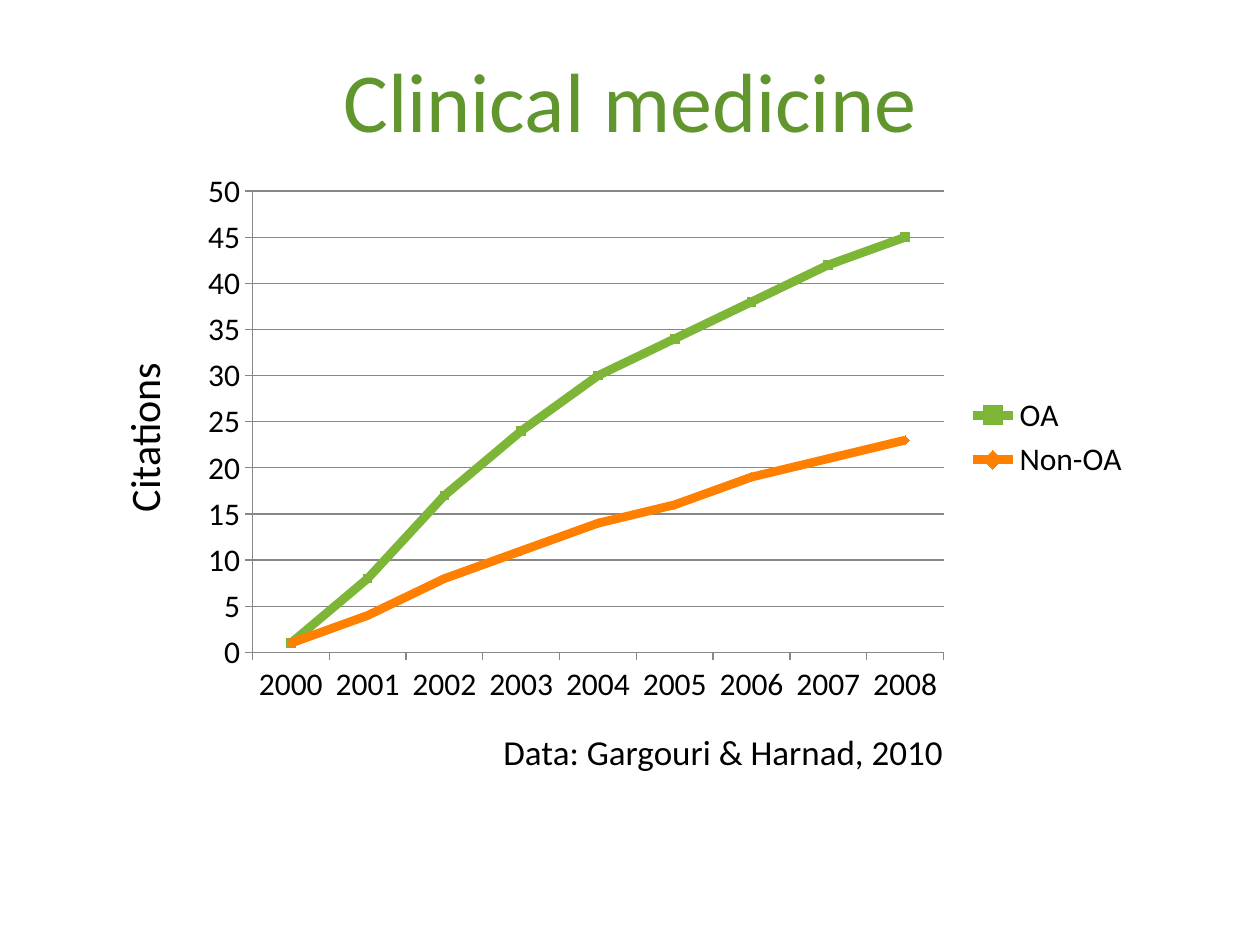
from pptx import Presentation
from pptx.chart.data import CategoryChartData
from pptx.dml.color import RGBColor
from pptx.enum.chart import XL_CHART_TYPE, XL_LEGEND_POSITION, XL_MARKER_STYLE, XL_TICK_MARK
from pptx.enum.text import MSO_ANCHOR, MSO_AUTO_SIZE, PP_ALIGN
from pptx.util import Pt

FONT = "Calibri"
COLORS = {"heading": "61952D", "text": "000000", "grid": "878787",
          "oa": "7DB536", "non_oa": "FF8000"}
YEARS = [str(year) for year in range(2000, 2009)]
CITATIONS = [
    ("OA", "oa", XL_MARKER_STYLE.SQUARE, [1, 8, 17, 24, 30, 34, 38, 42, 45]),
    ("Non-OA", "non_oa", XL_MARKER_STYLE.DIAMOND, [1, 4, 8, 11, 14, 16, 19, 21, 23]),
]


def rgb(name):
    return RGBColor.from_string(COLORS[name])


def points(box):
    return [Pt(length) for length in box]


def write(frame, text, size, color="text", align=PP_ALIGN.LEFT):
    paragraph = frame.paragraphs[0]
    paragraph.alignment = align
    run = paragraph.add_run()
    run.text = text
    run.font.name = FONT
    run.font.size = Pt(size)
    run.font.color.rgb = rgb(color)


def add_label(slide, box, text, size, align, vertical=None):
    frame = slide.shapes.add_textbox(*points(box)).text_frame
    frame.word_wrap = True
    frame.auto_size = MSO_AUTO_SIZE.SHAPE_TO_FIT_TEXT
    if vertical:
        frame._txBody.bodyPr.set("vert", vertical)
    write(frame, text, size, align=align)


def add_title(slide, box, text):
    title = slide.shapes.title
    title.left, title.top, title.width, title.height = points(box)
    title.text_frame.vertical_anchor = MSO_ANCHOR.MIDDLE
    write(title.text_frame, text, 48, color="heading", align=PP_ALIGN.CENTER)


def add_citation_chart(slide, box):
    left, top, width, height = box
    chart_data = CategoryChartData()
    chart_data.categories = YEARS
    for name, _, _, counts in CITATIONS:
        chart_data.add_series(name, counts)
    chart = slide.shapes.add_chart(
        XL_CHART_TYPE.LINE_MARKERS, *points(box), chart_data).chart
    chart.has_title = False
    chart.font.name = FONT
    chart.font.size = Pt(18)
    chart.font.color.rgb = rgb("text")

    # Axes and legend
    counts_axis = chart.value_axis
    for axis in (chart.category_axis, counts_axis):
        axis.major_tick_mark = XL_TICK_MARK.OUTSIDE
        axis.minor_tick_mark = XL_TICK_MARK.NONE
    counts_axis.minimum_scale, counts_axis.maximum_scale = 0, 50
    counts_axis.major_unit = 5
    counts_axis.has_major_gridlines = True
    for ruled in (chart.category_axis, counts_axis, counts_axis.major_gridlines):
        ruled.format.line.color.rgb = rgb("grid")
        ruled.format.line.width = Pt(0.75)
    chart.has_legend = True
    chart.legend.position = XL_LEGEND_POSITION.RIGHT
    chart.legend.include_in_layout = False

    # Series
    plot = chart.plots[0]
    plot.vary_by_categories = False
    for series, (_, color, marker, _) in zip(plot.series, CITATIONS):
        series.smooth = False
        series.format.line.color.rgb = rgb(color)
        series.format.line.width = Pt(5)
        series.marker.style = marker
        series.marker.size = 5
        series.marker.format.fill.solid()
        series.marker.format.fill.fore_color.rgb = rgb(color)
        series.marker.format.line.color.rgb = rgb(color)

    # Axis label and data credit around the chart
    add_label(slide, (left - 44, top + 45.5, 44, 225), "Citations", 24,
              PP_ALIGN.CENTER, vertical="vert270")
    add_label(slide, (left + 144, top + height + 6, 294, 31.5),
              "Data: Gargouri & Harnad, 2010", 20, PP_ALIGN.RIGHT)


def main():
    deck = Presentation()
    deck.slide_width, deck.slide_height = Pt(720), Pt(540)
    slide = deck.slides.add_slide(deck.slide_layouts[5])
    add_title(slide, (36, 21.5, 648, 70.5), "Clinical medicine")
    add_citation_chart(slide, (108, 92, 545, 316))
    deck.save("out.pptx")


if __name__ == "__main__":
    main()
